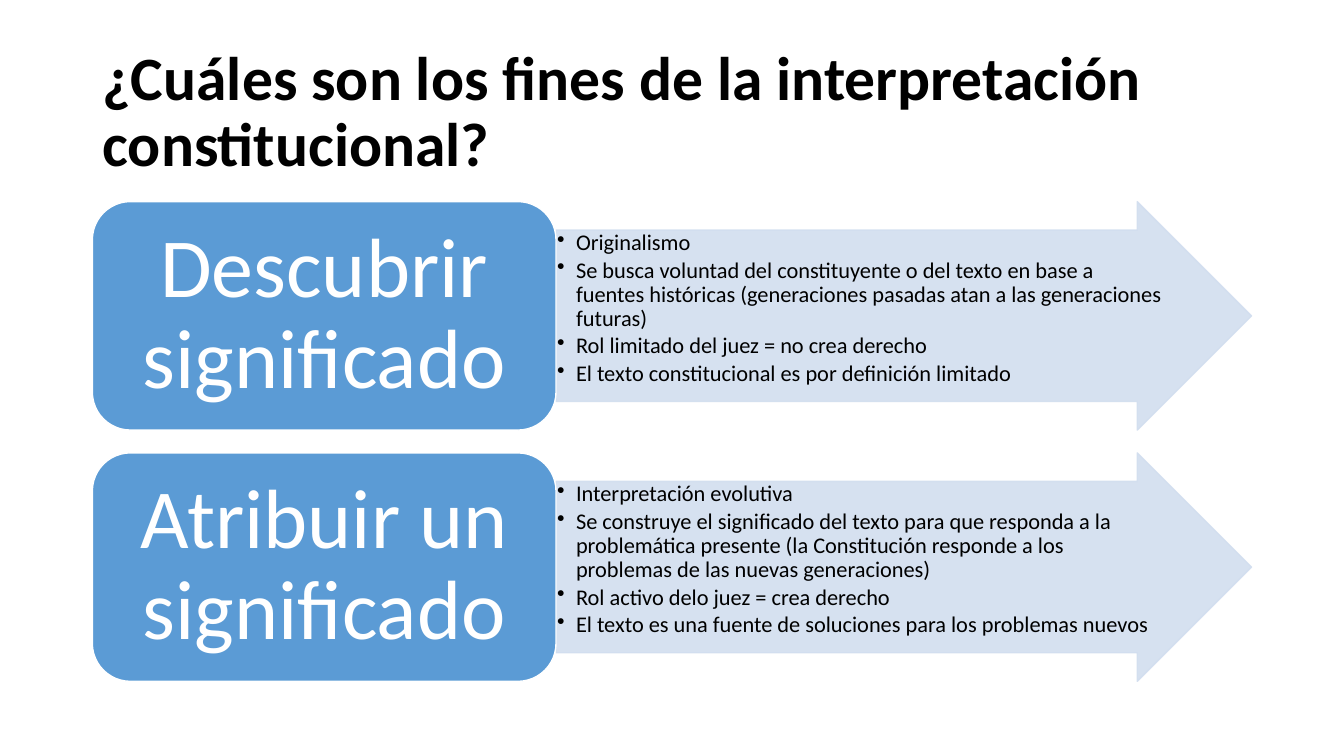
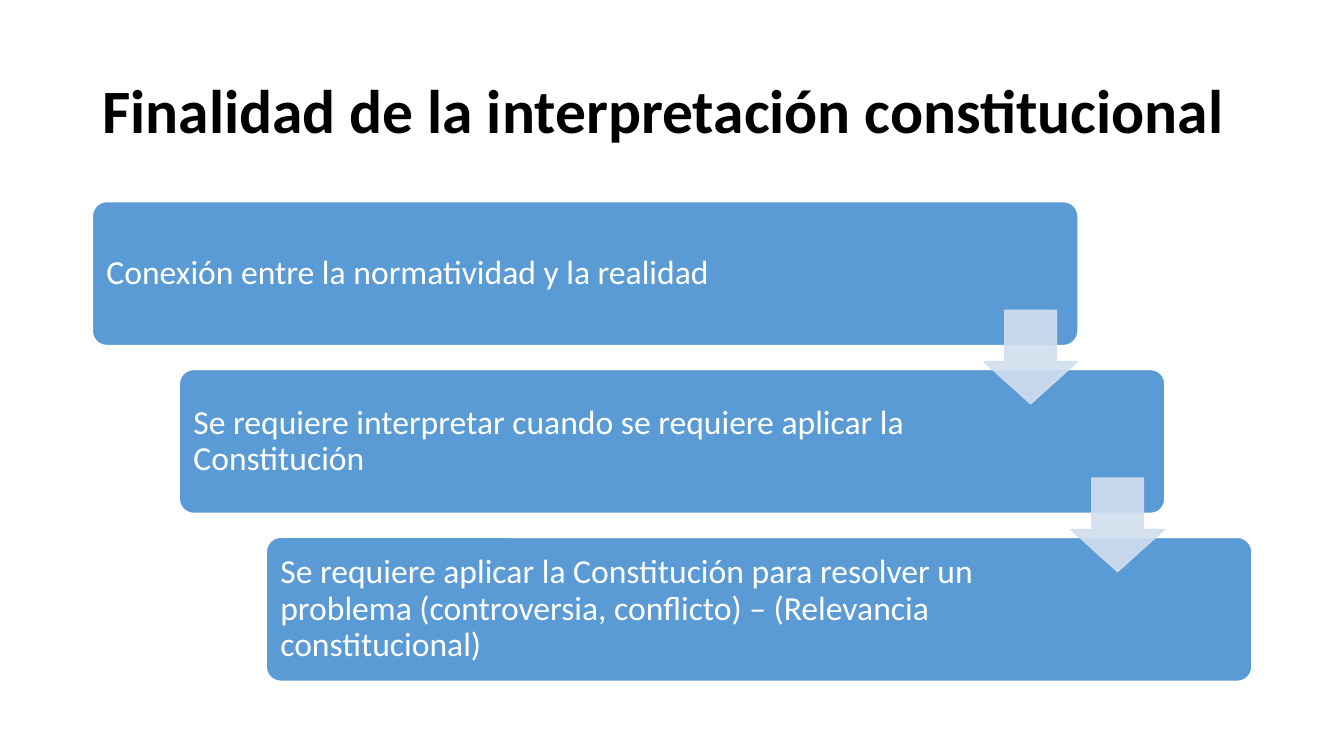
"""Build two slides on the aims of constitutional interpretation."""
from lxml import etree
from pptx import Presentation
from pptx.dml.color import RGBColor
from pptx.enum import shapes, text
from pptx.oxml.ns import qn
from pptx.util import Pt

FONT = "Calibri"
HUES = {"box": "5B9BD5", "pale": "D2DEEF", "ink": "000000", "white": "FFFFFF"}
KINDS = shapes.MSO_SHAPE
LEFT, TOP = 66, 144

AIMS = {
    "title": "¿Cuáles son los fines de la interpretación constitucional?",
    "rows": [
        ("Descubrir significado", [
            "Originalismo",
            "Se busca voluntad del constituyente o del texto en base a fuentes "
            "históricas (generaciones pasadas atan a las generaciones futuras)",
            "Rol limitado del juez = no crea derecho",
            "El texto constitucional es por definición limitado",
        ]),
        ("Atribuir un significado", [
            "Interpretación evolutiva",
            "Se construye el significado del texto para que responda a la problemática "
            "presente (la Constitución responde a los problemas de las nuevas generaciones)",
            "Rol activo delo juez = crea derecho",
            "El texto es una fuente de soluciones para los problemas nuevos",
        ]),
    ],
}
STEPS = {
    "title": "Finalidad de la interpretación constitucional",
    "rows": [
        ("Conexión entre la normatividad y la realidad", 113),
        ("Se requiere interpretar cuando se requiere aplicar la Constitución", 137),
        ("Se requiere aplicar la Constitución para resolver un problema "
         "(controversia, conflicto) – (Relevancia constitucional)", 137),
    ],
}


def hue(name):
    return RGBColor.from_string(HUES[name])


def fade(shape, share):
    for fill in shape._element.spPr.iter(qn("a:solidFill")):
        etree.SubElement(fill[0], qn("a:alpha"), val=str(share * 1000))


def draw(slide, kind, at, fill, line, ratios=()):
    shape = slide.shapes.add_shape(kind, *map(Pt, at))
    shape.shadow.inherit = False
    shape.fill.solid()
    shape.fill.fore_color.rgb = hue(fill)
    shape.line.color.rgb = hue(line)
    shape.line.width = Pt(1)
    for i, ratio in enumerate(ratios):
        shape.adjustments[i] = ratio
    return shape


def draw_arrow(slide, kind, at, ratios):
    shape = draw(slide, kind, at, "pale", "pale", ratios)
    fade(shape, 90)
    return shape


def write(shape, lines, size, color, pads, align=text.PP_ALIGN.LEFT,
          anchor=text.MSO_ANCHOR.MIDDLE, bold=False, after=0):
    frame = shape.text_frame
    frame.word_wrap = True
    frame.auto_size = text.MSO_AUTO_SIZE.NONE
    frame.vertical_anchor = anchor
    (frame.margin_left, frame.margin_top,
     frame.margin_right, frame.margin_bottom) = map(Pt, pads)
    for i, line in enumerate(lines):
        para = frame.paragraphs[0] if i == 0 else frame.add_paragraph()
        para.alignment = align
        para.line_spacing = 0.9
        para.space_before, para.space_after = Pt(0), Pt(after)
        run = para.add_run()
        run.text = line
        run.font.name, run.font.size, run.font.bold = FONT, Pt(size), bold
        run.font.color.rgb = hue(color)
    return frame


def add_bullets(frame, indent):
    for para in frame.paragraphs:
        props = para._p.get_or_add_pPr()
        props.set("marL", str(Pt(indent)))
        props.set("indent", str(-Pt(indent)))
        etree.SubElement(props, qn("a:buChar"), char="•")


def add_slide(deck, title):
    slide = deck.slides.add_slide(deck.slide_layouts[5])
    head = slide.shapes.title
    head.left, head.top, head.width, head.height = map(Pt, (LEFT, 28.8, 828, 104.4))
    write(head, [title], 44, "ink", (7.2, 3.6, 7.2, 3.6), bold=True)
    return slide


def add_aims(deck):
    slide = add_slide(deck, AIMS["title"])
    wide, high, pitch = 331.2, 163.2, 179.5
    for i, (name, points) in enumerate(AIMS["rows"]):
        top = TOP + i * pitch
        arrow = draw_arrow(slide, KINDS.RIGHT_ARROW,
                           (LEFT + wide, top, 496.8, high), (0.75, 0.5))
        frame = write(arrow, points, 16, "ink", (0.8,) * 4,
                      anchor=text.MSO_ANCHOR.TOP, after=2.4)
        add_bullets(frame, 13.5)
        box = draw(slide, KINDS.ROUNDED_RECTANGLE, (LEFT, top, wide, high), "box", "white")
        write(box, [name], 60, "white", (18, 9, 18, 9), text.PP_ALIGN.CENTER)


def add_steps(deck):
    slide = add_slide(deck, STEPS["title"])
    wide, high, right, down, side = 704, 102.8, 62.1, 119.9, 66.8
    rows = STEPS["rows"]
    for i, (name, pad) in enumerate(rows):
        box = draw(slide, KINDS.ROUNDED_RECTANGLE,
                   (LEFT + i * right, TOP + i * down, wide, high), "box", "white", (0.1,))
        write(box, [name], 24, "white", (7.2, 7.2, pad, 7.2))
    for i in range(len(rows) - 1):
        draw_arrow(slide, KINDS.DOWN_ARROW,
                   (702.8 + i * right, 221.6 + i * down, side, side), (0.55, 0.45))


def main():
    deck = Presentation()
    deck.slide_width, deck.slide_height = Pt(960), Pt(540)
    add_aims(deck)
    add_steps(deck)
    deck.save("out.pptx")


if __name__ == "__main__":
    main()
